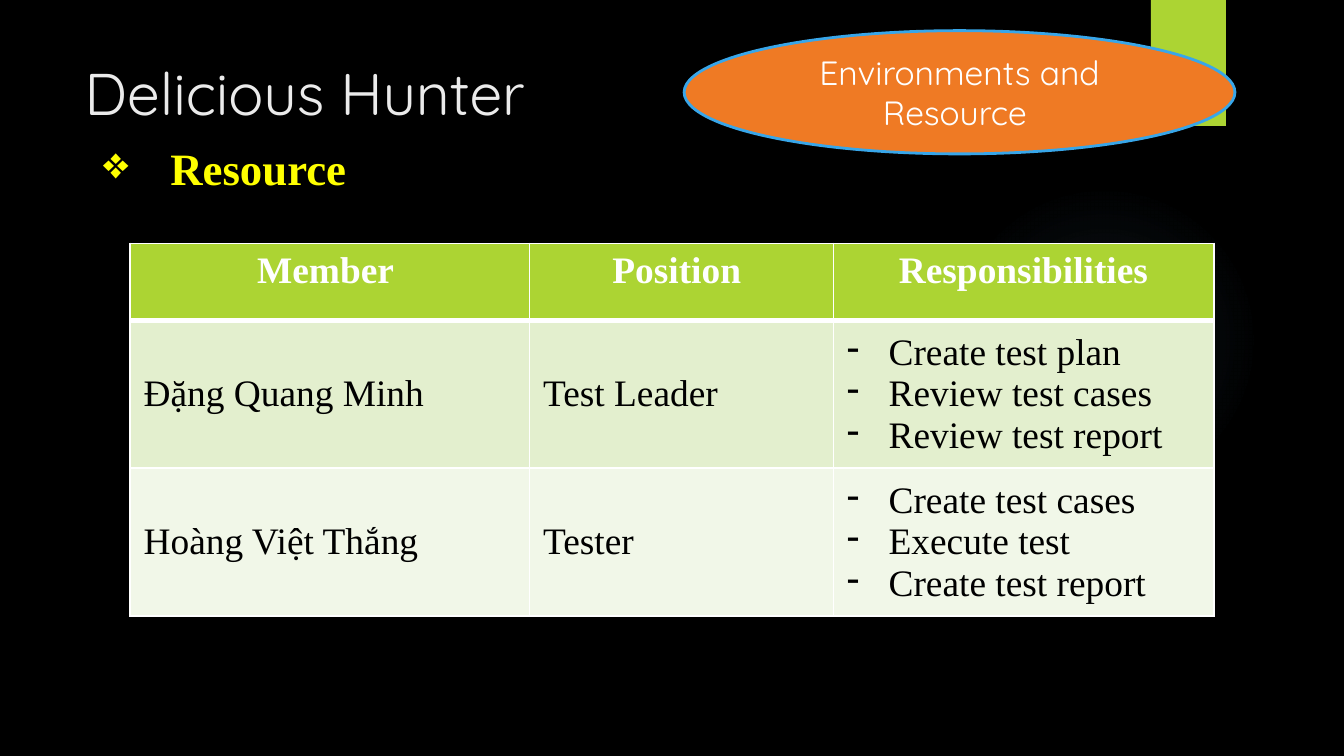
import pptx
import pptx.dml.color
import pptx.enum.shapes
import pptx.enum.text
import pptx.oxml
import pptx.oxml.ns
import pptx.util
from lxml import etree

Cm, Pt = pptx.util.Cm, pptx.util.Pt
RGB = pptx.dml.color.RGBColor
SHAPE = pptx.enum.shapes.MSO_SHAPE
ALIGN = pptx.enum.text.PP_ALIGN
ANCHOR = pptx.enum.text.MSO_ANCHOR
qn = pptx.oxml.ns.qn

BLACK = RGB(0, 0, 0)
WHITE = RGB(0xFF, 0xFF, 0xFF)
OFF_WHITE = RGB(0xEB, 0xEB, 0xEB)
YELLOW = RGB(0xFF, 0xFF, 0)
GREEN = RGB(0xAC, 0xD4, 0x33)
BAND_FILLS = [RGB(0xE3, 0xEF, 0xCE), RGB(0xF1, 0xF7, 0xE8)]
ORANGE = RGB(0xEF, 0x7A, 0x24)
BLUE = RGB(0x38, 0xA6, 0xE9)
GLOW = RGB(0x7A, 0xC4, 0xF0)
HEADING_FONT, BODY_FONT = "Quicksand", "Times New Roman"

HEADERS = ["Member ", "Position ", "Responsibilities"]
MEMBERS = [
    ("Đặng Quang Minh", "Test Leader",
     ["Create test plan", "Review test cases", "Review test report"]),
    ("Hoàng Việt Thắng", "Tester",
     ["Create test cases", "Execute test", "Create test report"]),
]


def write_text(tf, text, *, size, color, font=BODY_FONT, bold=False,
               align=ALIGN.LEFT, bullet=None, indent=0):
    """Fill a text frame; a list of strings gives one paragraph each."""
    tf.word_wrap = True
    lines = [text] if isinstance(text, str) else text
    for i, line in enumerate(lines):
        p = tf.paragraphs[0] if i == 0 else tf.add_paragraph()
        p.alignment = align
        if bullet:
            add_bullet(p, bullet, indent)
        r = p.add_run()
        r.text = line
        r.font.size = Pt(size)
        r.font.name = font
        r.font.bold = bold
        r.font.color.rgb = color


def add_bullet(p, char, indent):
    pPr = p._p.get_or_add_pPr()
    pPr.set("marL", str(indent))
    pPr.set("indent", str(-indent))
    etree.SubElement(pPr, qn("a:buChar")).set("char", char)


def add_text_box(s, box, text, **fmt):
    sp = s.shapes.add_textbox(*map(Cm, box))
    write_text(sp.text_frame, text, **fmt)


def add_plain_shape(s, kind, box, fill=None, line=None):
    sp = s.shapes.add_shape(kind, *map(Cm, box))
    sp.shadow.inherit = False
    if fill is not None:
        sp.fill.solid()
        sp.fill.fore_color.rgb = fill
    if line is None:
        sp.line.fill.background()
    else:
        sp.line.color.rgb = line
        sp.line.width = Pt(1.5)
    return sp


def add_glow(s, box):
    """A faint circle that fades out from its centre."""
    sp = add_plain_shape(s, SHAPE.OVAL, box)
    stops = "".join(
        f'<a:gs pos="{pos * 1000}"><a:srgbClr val="{GLOW}">'
        f'<a:alpha val="{alpha * 1000}"/></a:srgbClr></a:gs>'
        for pos, alpha in [(0, 7), (36, 6), (69, 0), (100, 0)])
    fill = pptx.oxml.parse_xml(
        f'<a:gradFill {pptx.oxml.ns.nsdecls("a")}><a:gsLst>{stops}</a:gsLst>'
        '<a:path path="circle"><a:fillToRect l="50000" t="50000" r="50000" '
        'b="50000"/></a:path></a:gradFill>')
    sp._element.spPr.find(qn("a:prstGeom")).addnext(fill)


def set_borders(cell, **widths):
    """Draw white borders; each side is 1 pt unless given, as in B=3."""
    tcPr = cell._tc.get_or_add_tcPr()
    for i, side in enumerate("LRTB"):
        width = Pt(widths.get(side, 1))
        tcPr.insert(i, pptx.oxml.parse_xml(
            f'<a:ln{side} {pptx.oxml.ns.nsdecls("a")} w="{width}"><a:solidFill>'
            f'<a:srgbClr val="{WHITE}"/></a:solidFill></a:ln{side}>'))


def fill_cell(cell, text, fill, borders, anchor=ANCHOR.TOP, **fmt):
    cell.fill.solid()
    cell.fill.fore_color.rgb = fill
    cell.vertical_anchor = anchor
    set_borders(cell, **borders)
    write_text(cell.text_frame, text, size=20, **fmt)


def add_member_table(s):
    widths, heights = [7.55, 5.74, 7.19], [1.45, 2.6, 2.6]
    table = s.shapes.add_table(len(heights), len(widths), Cm(2.46), Cm(4.6),
                               Cm(sum(widths)), Cm(sum(heights))).table
    table.first_row = table.horz_banding = False
    for column, width in zip(table.columns, widths):
        column.width = Cm(width)
    for row, height in zip(table.rows, heights):
        row.height = Cm(height)

    for c, text in enumerate(HEADERS):
        fill_cell(table.cell(0, c), text, GREEN, {"B": 3}, color=WHITE,
                  bold=True, align=ALIGN.CENTER)
    for r, (member, fill) in enumerate(zip(MEMBERS, BAND_FILLS), start=1):
        for c, text in enumerate(member):
            bullet = "-" if isinstance(text, list) else None
            fill_cell(table.cell(r, c), text, fill, {"T": 3} if r == 1 else {},
                      color=BLACK, anchor=ANCHOR.MIDDLE, bullet=bullet,
                      indent=Cm(0.79))


def main():
    prs = pptx.Presentation()
    prs.slide_width, prs.slide_height = Cm(25.4), Cm(14.29)
    s = prs.slides.add_slide(prs.slide_layouts[6])
    s.background.fill.solid()
    s.background.fill.fore_color.rgb = BLACK

    add_glow(s, (17.93, 3.5, 5.87, 5.87))
    add_plain_shape(s, SHAPE.RECTANGLE, (21.75, 0, 1.42, 2.38), GREEN)
    add_text_box(s, (1.35, 0.94, 19.58, 2.92), "Delicious Hunter",
                 size=31.5, color=OFF_WHITE, font=HEADING_FONT)
    add_member_table(s)
    topic = add_plain_shape(s, SHAPE.OVAL, (12.93, 0.58, 10.41, 2.33),
                            ORANGE, BLUE)
    topic.text_frame.vertical_anchor = ANCHOR.MIDDLE
    write_text(topic.text_frame, "Environments and Resource ", size=18,
               color=WHITE, font=HEADING_FONT, align=ALIGN.CENTER)
    add_text_box(s, (1.7, 2.54, 7.82, 1.27), "Resource", size=24,
                 color=YELLOW, bold=True, bullet="❖", indent=Cm(1.27))
    prs.save("out.pptx")


if __name__ == "__main__":
    main()
